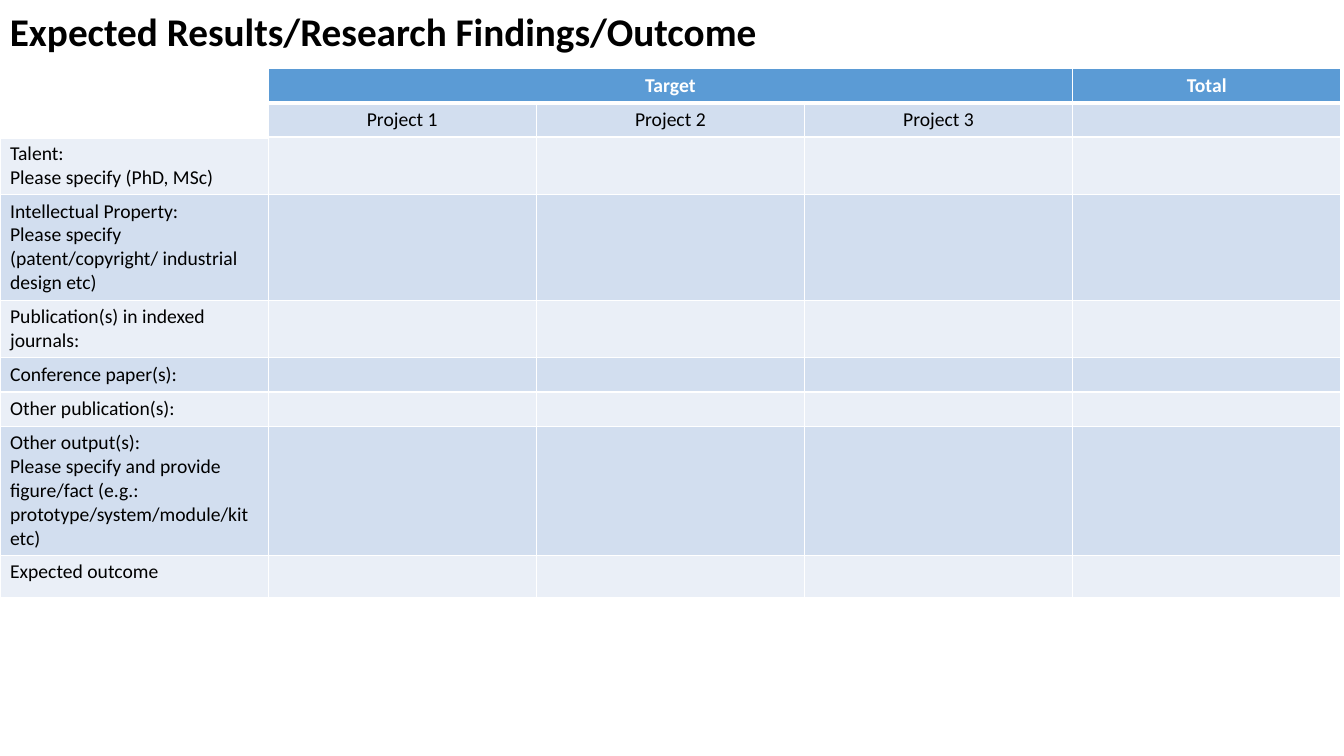
from lxml.etree import SubElement
from pptx import Presentation
from pptx.dml.color import RGBColor
from pptx.enum.text import MSO_ANCHOR, PP_ALIGN
from pptx.oxml.ns import qn
from pptx.util import Inches, Pt

COLORS = {"black": "000000", "white": "FFFFFF", "header": "5B9BD5",
          "dark_band": "D2DEEF", "light_band": "EAEFF7"}
ROW_HEIGHTS = [0.34, 0.34, 0.57, 1.05, 0.57, 0.34, 0.34, 1.28, 0.42]
COLUMN_COUNT = 5
COLUMN_WIDTH = 2.66
HEADERS = ["", "Target", "", "", "Total"]
PROJECTS = ["", "Project 1", "Project 2", "Project 3", ""]
OUTCOMES = [
    "Talent:\nPlease specify (PhD, MSc)",
    "Intellectual Property:\nPlease specify (patent/copyright/ industrial design etc)",
    "Publication(s) in indexed journals:",
    "Conference paper(s):",
    "Other publication(s):",
    "Other output(s):\nPlease specify and provide figure/fact "
    "(e.g.: prototype/system/module/kit etc)",
    "Expected outcome",
]


def write_text(frame, text, size=14, color="black", bold=False,
               align=PP_ALIGN.LEFT, line_spacing=1.0, font="Calibri"):
    for index, line in enumerate(text.split("\n")):
        paragraph = frame.add_paragraph() if index else frame.paragraphs[0]
        paragraph.alignment = align
        paragraph.line_spacing = line_spacing
        if not line:
            paragraph._p.get_or_add_endParaRPr().set("sz", str(size * 100))
            continue
        run = paragraph.add_run()
        run.text = line
        run.font.name = font
        run.font.size = Pt(size)
        run.font.bold = bold
        run.font.color.rgb = RGBColor.from_string(COLORS[color])


class OutcomeSlide:
    def __init__(self, presentation):
        self.slide = presentation.slides.add_slide(presentation.slide_layouts[6])

    def title(self, text, left, top, width, height):
        shape = self.slide.shapes.add_textbox(
            Inches(left), Inches(top), Inches(width), Inches(height))
        shape.text_frame.word_wrap = True
        shape.text_frame.vertical_anchor = MSO_ANCHOR.MIDDLE
        write_text(shape.text_frame, text, size=28, bold=True, line_spacing=0.9)

    def borders(self, cell, top=1, bottom=1):
        properties = cell._tc.get_or_add_tcPr()
        for side, width in (("L", 1), ("R", 1), ("T", top), ("B", bottom)):
            line = SubElement(properties, qn(f"a:ln{side}"), w=str(Pt(width)))
            fill = SubElement(line, qn("a:solidFill"))
            SubElement(fill, qn("a:srgbClr"), val=COLORS["white"])

    def cell(self, cell, text, fill, top=1, bottom=1, **text_format):
        self.borders(cell, top, bottom)
        if fill:
            cell.fill.solid()
            cell.fill.fore_color.rgb = RGBColor.from_string(COLORS[fill])
        else:
            cell.fill.background()
        write_text(cell.text_frame, text, **text_format)

    def table(self, rows, left, top):
        shape = self.slide.shapes.add_table(
            len(rows), COLUMN_COUNT, Inches(left), Inches(top),
            Inches(COLUMN_WIDTH * COLUMN_COUNT), Inches(sum(ROW_HEIGHTS)))
        table = shape.table
        table.first_row = table.horz_banding = False
        for column in table.columns:
            column.width = Inches(COLUMN_WIDTH)
        for row, height in zip(table.rows, ROW_HEIGHTS):
            row.height = Inches(height)
        for row_index, texts in enumerate(rows):
            is_header = row_index == 0
            band = "dark_band" if row_index % 2 else "light_band"
            for column_index, text in enumerate(texts):
                is_corner = row_index < 2 and column_index == 0
                fill = None if is_corner else "header" if is_header else band
                self.cell(
                    table.cell(row_index, column_index), text, fill,
                    top=3 if row_index == 1 else 1,
                    bottom=3 if is_header else 1,
                    color="white" if is_header else "black", bold=is_header,
                    align=PP_ALIGN.CENTER if row_index < 2 else PP_ALIGN.LEFT)
        table.cell(0, 0).merge(table.cell(1, 0))
        table.cell(0, 1).merge(table.cell(0, 3))


def main():
    presentation = Presentation()
    presentation.slide_width = Inches(13.33)
    presentation.slide_height = Inches(7.5)
    outcome_slide = OutcomeSlide(presentation)
    outcome_slide.title("Expected Results/Research Findings/Outcome", 0, 0, 9.43, 0.68)
    outcome_rows = [[label] + [""] * (COLUMN_COUNT - 1) for label in OUTCOMES]
    outcome_slide.table([HEADERS, PROJECTS] + outcome_rows, 0, 0.68)
    presentation.save("out.pptx")


if __name__ == "__main__":
    main()
